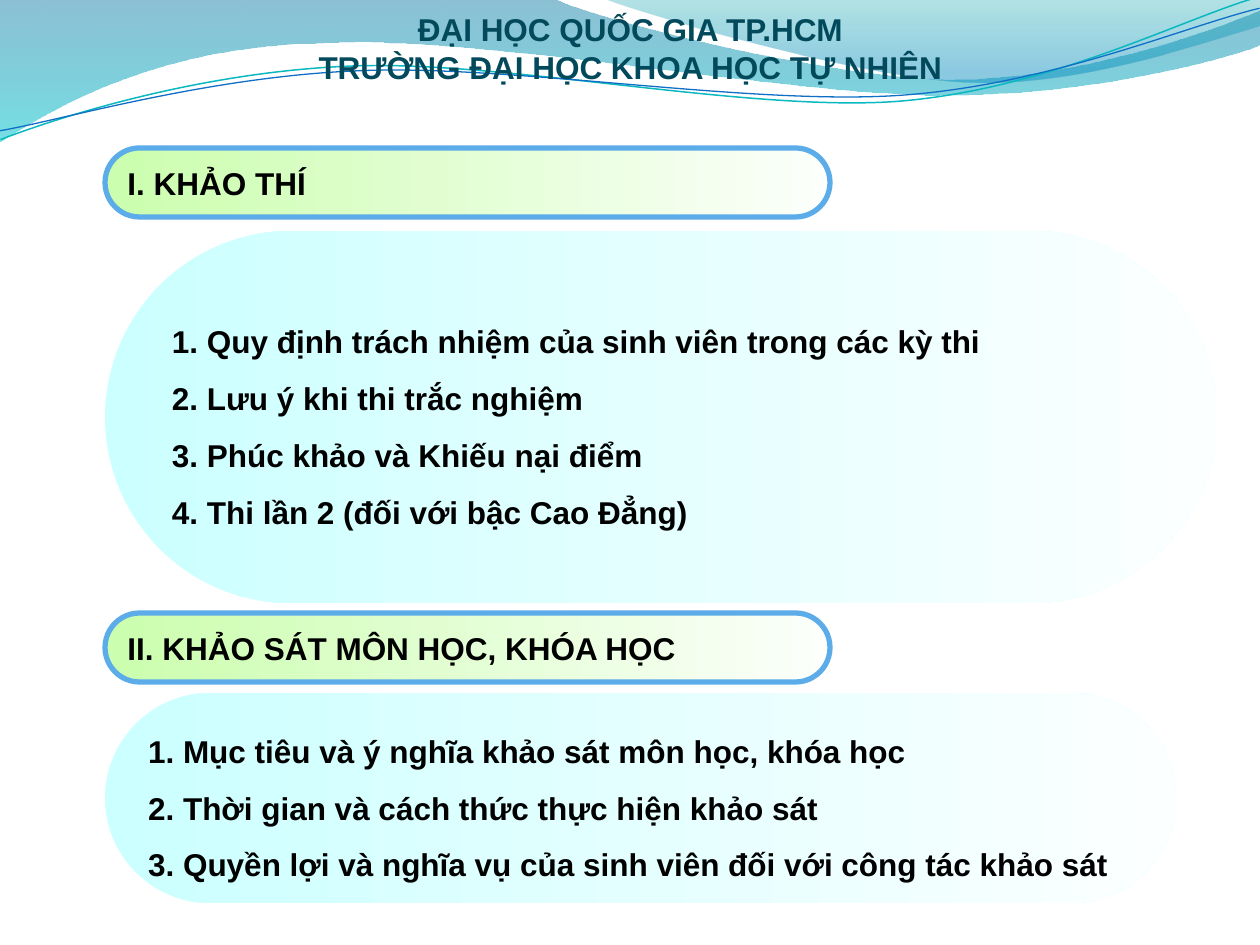
from lxml.etree import SubElement
from pptx import Presentation
from pptx.dml.color import RGBColor
from pptx.enum.shapes import MSO_SHAPE as Kind
from pptx.enum.text import MSO_ANCHOR as Anchor, PP_ALIGN as Align
from pptx.oxml.ns import qn
from pptx.util import Inches, Pt

PX = Inches(1) / 126

# Each step is a line to (x, y) or a cubic curve (x1, y1, x2, y2, x, y).
BAND = [(0, 0), (554, -1), (600, 21, 837, 79, 955, 79),
        (1075, 79, 1207, 33, 1260, 11), (1261, 45),
        (1239, 55, 1096, 96, 940, 95), (784, 95, 481, 35, 324, 43),
        (163, 45, 58, 105, -1, 142), (0, 0)]
CREST = [(604, -1), (641, 14, 859, 78, 969, 82),
         (1079, 87, 1211, 40, 1260, 26), (1260, 0), (604, -1)]
# The strands are drawn level, then tilted.
TILT = 357.3
TEAL_LINE = [(-2, 110), (58, 90, 200, 52, 350, 53),
             (499, 53, 745, 118, 896, 114), (1049, 109, 1184, 45, 1260, 27)]
BLUE_LINE = [(-2, 101), (57, 94, 207, 57, 357, 58),
             (509, 58, 750, 112, 902, 108), (1052, 104, 1188, 52, 1262, 38)]

HEADER = ["ĐẠI HỌC QUỐC GIA TP.HCM", "TRƯỜNG ĐẠI HỌC KHOA HỌC TỰ NHIÊN"]
EXAMS = ["1. Quy định trách nhiệm của sinh viên trong các kỳ thi",
         "2. Lưu ý khi thi trắc nghiệm",
         "3. Phúc khảo và Khiếu nại điểm",
         "4. Thi lần 2 (đối với bậc Cao Đẳng)"]
SURVEY = ["1. Mục tiêu và ý nghĩa khảo sát môn học, khóa học",
          "2. Thời gian và cách thức thực hiện khảo sát",
          "3. Quyền lợi và nghĩa vụ của sinh viên đối với công tác khảo sát"]


def px(n):
    return round(n * PX)


def rgb(code):
    return RGBColor.from_string(code)


def blend(shape, stops, angle=0):
    """Gradient fill from (position, colour, opacity) stops, angle clockwise."""
    shape.fill.gradient()
    shape.fill.gradient_angle = -angle % 360
    for stop, (pos, code, alpha) in zip(shape.fill.gradient_stops, stops):
        stop.position = pos
        stop.color.rgb = rgb(code)
    marks = shape._element.spPr.iter(qn("a:srgbClr"))
    for mark, (pos, code, alpha) in zip(list(marks), stops):
        if alpha < 100:
            SubElement(mark, qn("a:alpha")).set("val", str(alpha * 1000))


def wave(slide, steps, closed):
    """Freeform whose six-number steps become true cubic curves."""
    dots = [(px(x), px(y)) for step in steps
            for x, y in zip(step[::2], step[1::2])]
    pen = slide.shapes.build_freeform(*dots[0])
    pen.add_line_segments(dots[1:], closed)
    shape = pen.convert_to_shape()
    shape.shadow.inherit = False
    legs = iter(list(shape._element.spPr.iter(qn("a:lnTo"))))
    for step in steps[1:]:
        leg = next(legs)
        if len(step) == 6:
            leg.tag = qn("a:cubicBezTo")
            for other in (next(legs), next(legs)):
                leg.append(other[0])
                other.getparent().remove(other)
    return shape


def area(slide, steps, stops):
    shape = wave(slide, steps, True)
    blend(shape, stops, 90)
    shape.line.fill.background()


def strand(slide, steps, code, width):
    shape = wave(slide, steps, False)
    shape.rotation = TILT
    shape.fill.background()
    shape.line.color.rgb = rgb(code)
    shape.line.width = Pt(width)


def write(shape, lines, color="000000", align=Align.LEFT, gap=1.0, wrap=False):
    frame = shape.text_frame
    frame.word_wrap = wrap
    frame.vertical_anchor = Anchor.MIDDLE
    for i, text in enumerate(lines):
        para = frame.paragraphs[0] if i == 0 else frame.add_paragraph()
        para.alignment = align
        para.line_spacing = gap
        para.space_before = Pt(0)
        run = para.add_run()
        run.text = text
        font = run.font
        font.name, font.size, font.bold = "Arial", Pt(18), True
        font.color.rgb = rgb(color)


def block(slide, kind, *box):
    shape = slide.shapes.add_shape(kind, *map(px, box))
    shape.shadow.inherit = False
    shape.line.fill.background()
    return shape


def pill(slide, box, colors):
    shape = block(slide, Kind.ROUNDED_RECTANGLE, *box)
    shape.adjustments[0] = 0.5
    blend(shape, [(0, colors[0], 100), (1, colors[1], 100)])
    return shape


def heading(slide, top, text):
    shape = pill(slide, (105, top, 725, 69), ("CBFEAE", "FCFFFB"))
    shape.line.color.rgb = rgb("5BACE9")
    shape.line.width = Pt(3)
    write(shape, [text])


def panel(slide, top, width, height, lines):
    shape = pill(slide, (105, top, width, height), ("CCFFFF", "FCFFFF"))
    write(shape, lines, gap=1.5)


def header(slide):
    title = slide.shapes.title
    title.left, title.top, title.width, title.height = map(px, (1, 0, 1259, 96))
    write(title, HEADER, color="03495C", align=Align.CENTER, wrap=True)
    # Bring the title in front of the waves.
    slide.shapes._spTree.append(title._element)


def main():
    deck = Presentation()
    deck.slide_width, deck.slide_height = px(1260), px(945)
    slide = deck.slides.add_slide(deck.slide_layouts[5])

    area(slide, BAND, [(0, "0074A1", 45), (1, "00C6CF", 55)])
    area(slide, CREST, [(0, "00A1A9", 30), (0.8, "008BBF", 45)])
    strand(slide, TEAL_LINE, "0AB8BF", 0.85)
    strand(slide, BLUE_LINE, "0F6FC6", 0.75)
    page = block(slide, Kind.ROUND_2_DIAG_RECTANGLE, 1, 106, 1259, 839)
    page.fill.solid()
    page.fill.fore_color.rgb = rgb("FFFFFF")
    header(slide)

    panel(slide, 231, 1112, 372, EXAMS)
    heading(slide, 613, "II. KHẢO SÁT MÔN HỌC, KHÓA HỌC")
    panel(slide, 693, 1071, 210, SURVEY)
    heading(slide, 148, "I. KHẢO THÍ")
    deck.save("out.pptx")


if __name__ == "__main__":
    main()
